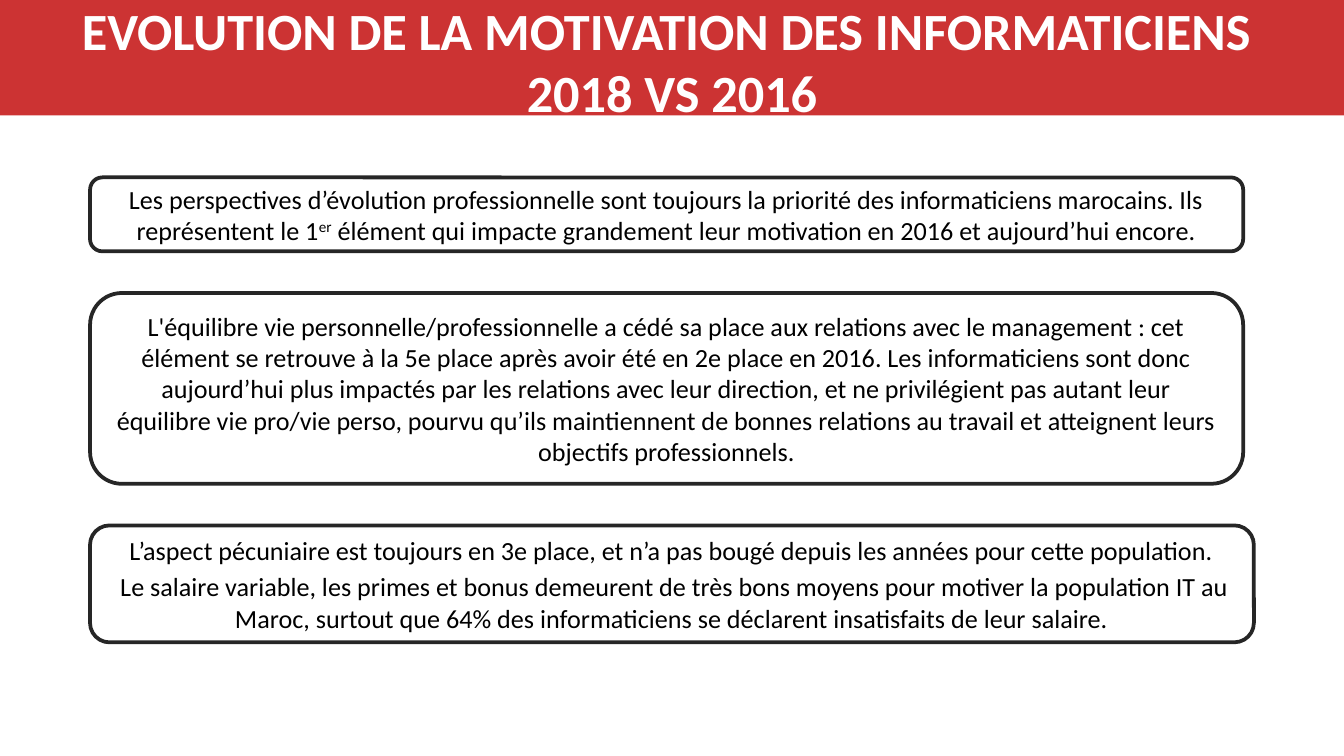
import pptx
import pptx.dml.color
import pptx.enum.shapes
import pptx.enum.text
import pptx.util
from dataclasses import dataclass

Inches = pptx.util.Inches
Pt = pptx.util.Pt
RGB = pptx.dml.color.RGBColor.from_string
SHAPE = pptx.enum.shapes.MSO_SHAPE
CENTER = pptx.enum.text.PP_ALIGN.CENTER
MIDDLE = pptx.enum.text.MSO_ANCHOR.MIDDLE


@dataclass
class Theme:
    font: str = "Calibri"
    band: str = "CC3333"
    title_color: str = "FFFFFF"
    text_color: str = "000000"
    outline: str = "262626"
    title_size: int = 28
    body_size: int = 14
    line_width: int = 2
    paragraph_gap: float = 2.8


class SlideBuilder:
    def __init__(self, prs, theme):
        self.theme = theme
        self.slide = prs.slides.add_slide(prs.slide_layouts[5])

    def style(self, p, size, color, bold=False):
        p.alignment = CENTER
        p.font.name = self.theme.font
        p.font.size = Pt(size)
        p.font.bold = bold
        p.font.color.rgb = RGB(color)

    def band(self, width, height):
        sp = self.slide.shapes.add_shape(SHAPE.RECTANGLE, 0, 0, width, height)
        sp.shadow.inherit = False
        sp.fill.solid()
        sp.fill.fore_color.rgb = RGB(self.theme.band)
        sp.line.fill.background()
        # Keep the band behind the title
        self.slide.shapes.title.element.addprevious(sp.element)

    def title(self, text, left, top, width, height):
        sp = self.slide.shapes.title
        sp.left, sp.top, sp.width, sp.height = left, top, width, height
        tf = sp.text_frame
        tf.auto_size = pptx.enum.text.MSO_AUTO_SIZE.NONE
        tf.vertical_anchor = MIDDLE
        tf.text = text
        self.style(tf.paragraphs[0], self.theme.title_size,
                   self.theme.title_color, bold=True)

    def box(self, paragraphs, left, top, width, height):
        """Each paragraph is a list of (text, is_superscript) runs."""
        sp = self.slide.shapes.add_shape(
            SHAPE.ROUNDED_RECTANGLE, left, top, width, height)
        sp.shadow.inherit = False
        sp.fill.background()
        sp.line.color.rgb = RGB(self.theme.outline)
        sp.line.width = Pt(self.theme.line_width)
        tf = sp.text_frame
        tf.word_wrap = True
        tf.vertical_anchor = MIDDLE
        for i, runs in enumerate(paragraphs):
            p = tf.add_paragraph() if i else tf.paragraphs[0]
            if i:
                p.space_before = Pt(self.theme.paragraph_gap)
            self.style(p, self.theme.body_size, self.theme.text_color)
            for text, superscript in runs:
                r = p.add_run()
                r.text = text
                if superscript:
                    r.font._element.set("baseline", "30000")


# Text, top, width and height of each box
BOXES = [
    ([[("L’aspect pécuniaire est toujours en 3e place, et n’a pas bougé "
        "depuis les années pour cette population.", False)],
      [(" Le salaire variable, les primes et bonus demeurent de très bons "
        "moyens pour motiver la population IT au Maroc, surtout que 64% des "
        "informaticiens se déclarent insatisfaits de leur salaire.", False)]],
     3.91, 8.66, 0.87),
    ([[("Les perspectives d’évolution professionnelle sont toujours la "
        "priorité des informaticiens marocains. Ils représentent le 1", False),
       ("er", True),
       (" élément qui impacte grandement leur motivation en 2016 et "
        "aujourd’hui encore.", False)]],
     1.32, 8.58, 0.55),
    ([[("L'équilibre vie personnelle/professionnelle a cédé sa place aux "
        "relations avec le management : cet élément se retrouve à la 5e place "
        "après avoir été en 2e place en 2016. Les informaticiens sont donc "
        "aujourd’hui plus impactés par les relations avec leur direction, et "
        "ne privilégient pas autant leur équilibre vie pro/vie perso, pourvu "
        "qu’ils maintiennent de bonnes relations au travail et atteignent "
        "leurs objectifs professionnels.", False)]],
     2.18, 8.58, 1.42),
]


def main():
    prs = pptx.Presentation()
    # Widescreen, 16:9
    prs.slide_width, prs.slide_height = Inches(10), Inches(10 * 9 / 16)
    s = SlideBuilder(prs, Theme())

    # Header
    s.band(prs.slide_width, Inches(0.86))
    s.title("EVOLUTION DE LA MOTIVATION DES INFORMATICIENS \v2018 VS 2016",
            0, Inches(-0.02), prs.slide_width, Inches(0.94))

    # Findings
    for paragraphs, top, width, height in BOXES:
        s.box(paragraphs, Inches(0.67), Inches(top), Inches(width), Inches(height))

    prs.save("out.pptx")


if __name__ == "__main__":
    main()
